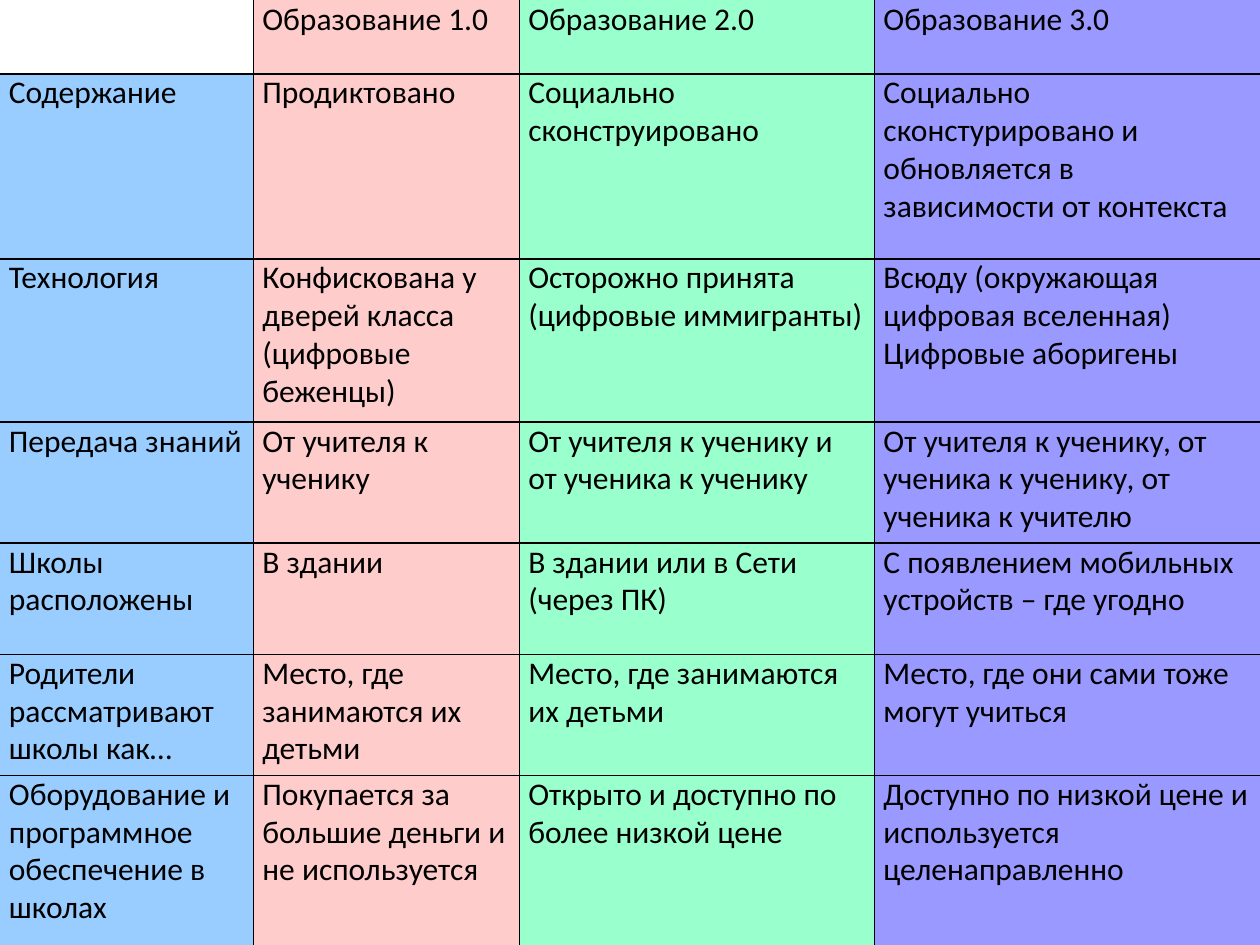
from dataclasses import dataclass

from lxml import etree
from pptx import Presentation
from pptx.dml.color import RGBColor
from pptx.oxml import ns
from pptx.util import Cm, Pt

COLORS = {
    "text": "000000",
    "border": "000000",
    "aspect": "99CCFF",
    "education_1": "FFCCCC",
    "education_2": "99FFCC",
    "education_3": "9999FF",
}


@dataclass
class Column:
    color: str
    width: float


@dataclass
class Row:
    height: float
    texts: tuple[str, str, str, str]


COLUMNS = [
    Column("aspect", 5.11),
    Column("education_1", 5.36),
    Column("education_2", 7.16),
    Column("education_3", 7.77),
]

ROWS = [
    Row(1.49, ("", "Образование 1.0", "Образование 2.0", "Образование 3.0")),
    Row(3.73, ("Содержание", "Продиктовано", "Социально сконструировано",
               "Социально сконстурировано и обновляется в зависимости от контекста")),
    Row(3.29, ("Технология", "Конфискована у дверей класса (цифровые беженцы)",
               "Осторожно принята (цифровые иммигранты)",
               "Всюду (окружающая цифровая вселенная)\nЦифровые аборигены")),
    Row(2.44, ("Передача знаний", "От учителя к ученику",
               "От учителя к ученику и от ученика к ученику",
               "От учителя к ученику, от ученика к ученику, от ученика к учителю")),
    Row(2.24, ("Школы расположены", "В здании", "В здании или в Сети (через ПК)",
               "С появлением мобильных устройств – где угодно")),
    Row(2.44, ("Родители рассматривают школы как…", "Место, где занимаются их детьми",
               "Место, где занимаются их детьми",
               "Место, где они сами тоже могут учиться")),
    Row(4.8, ("Оборудование и программное обеспечение в школах",
              "Покупается за большие деньги и не используется",
              "Открыто и доступно по более низкой цене",
              "Доступно по низкой цене и используется целенаправленно")),
]


def add_border(cell, side: str, visible: bool) -> None:
    properties = cell._tc.get_or_add_tcPr()
    line = etree.SubElement(properties, ns.qn(f"a:ln{side}"), w=str(Pt(1)))
    if visible:
        fill = etree.SubElement(line, ns.qn("a:solidFill"))
        etree.SubElement(fill, ns.qn("a:srgbClr"), val=COLORS["border"])
    else:
        etree.SubElement(line, ns.qn("a:noFill"))


def fill_cell(cell, content: str, color: str) -> None:
    cell.margin_left = cell.margin_right = Cm(0.18)
    cell.margin_top = cell.margin_bottom = Cm(0)
    if not content:
        cell.fill.background()
        return
    cell.fill.solid()
    cell.fill.fore_color.rgb = RGBColor.from_string(COLORS[color])
    cell.text = content
    for paragraph in cell.text_frame.paragraphs:
        paragraph.line_spacing = 0.98
        paragraph.font.name = "Calibri"
        paragraph.font.size = Pt(18)
        paragraph.font.bold = False
        paragraph.font.color.rgb = RGBColor.from_string(COLORS["text"])


def add_comparison(slide, columns: list[Column], rows: list[Row]) -> None:
    width = sum(column.width for column in columns)
    height = sum(row.height for row in rows)
    comparison = slide.shapes.add_table(
        len(rows), len(columns), Cm(0), Cm(0), Cm(width), Cm(height)).table
    comparison.first_row = comparison.horz_banding = False

    for index, column in enumerate(columns):
        comparison.columns[index].width = Cm(column.width)
    for r, row in enumerate(rows):
        comparison.rows[r].height = Cm(row.height)
        for c, column in enumerate(columns):
            cell = comparison.cell(r, c)
            # Only the inner grid is ruled; the outer edges stay open
            add_border(cell, "L", c > 0)
            add_border(cell, "R", c < len(columns) - 1)
            add_border(cell, "T", r > 0)
            add_border(cell, "B", r < len(rows) - 1)
            fill_cell(cell, row.texts[c], column.color)


def main() -> None:
    presentation = Presentation()
    presentation.slide_width, presentation.slide_height = Cm(25.4), Cm(19.05)
    slide = presentation.slides.add_slide(presentation.slide_layouts[6])
    # Comparison of the three generations of education
    add_comparison(slide, COLUMNS, ROWS)
    presentation.save("out.pptx")


if __name__ == "__main__":
    main()
